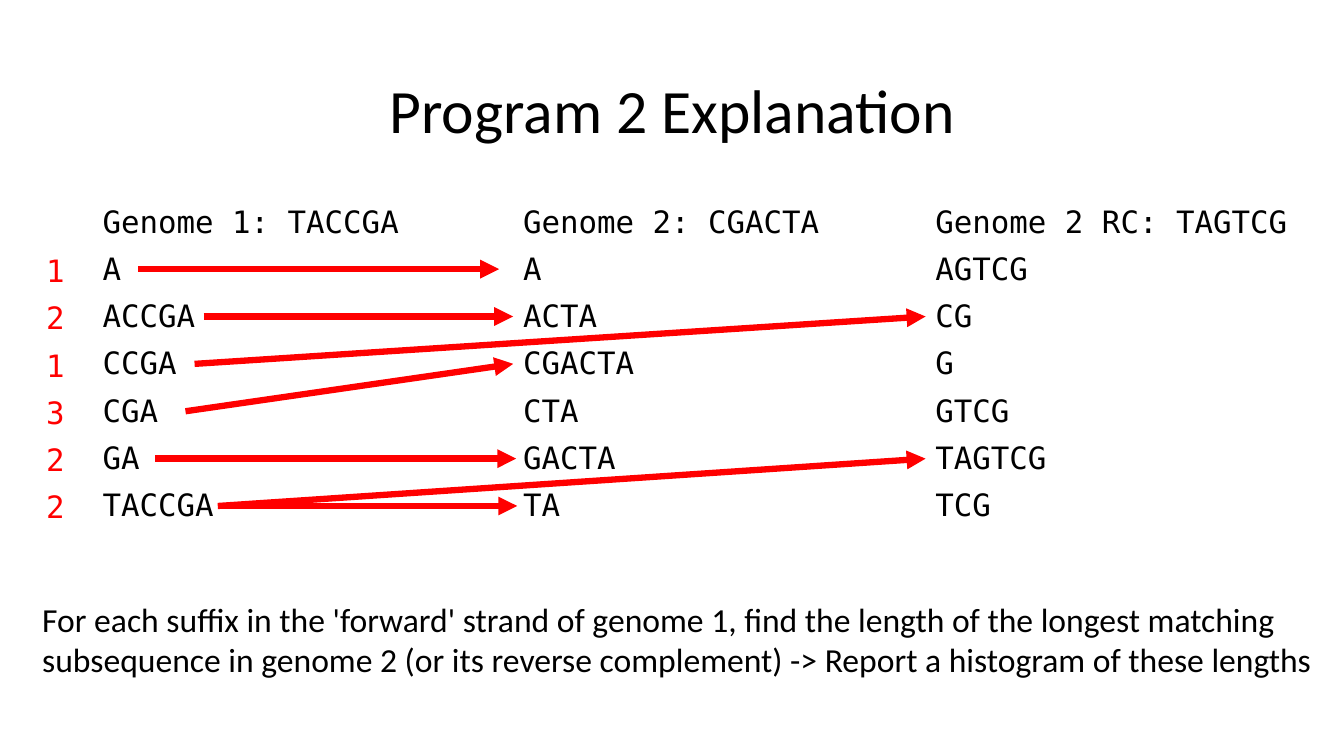
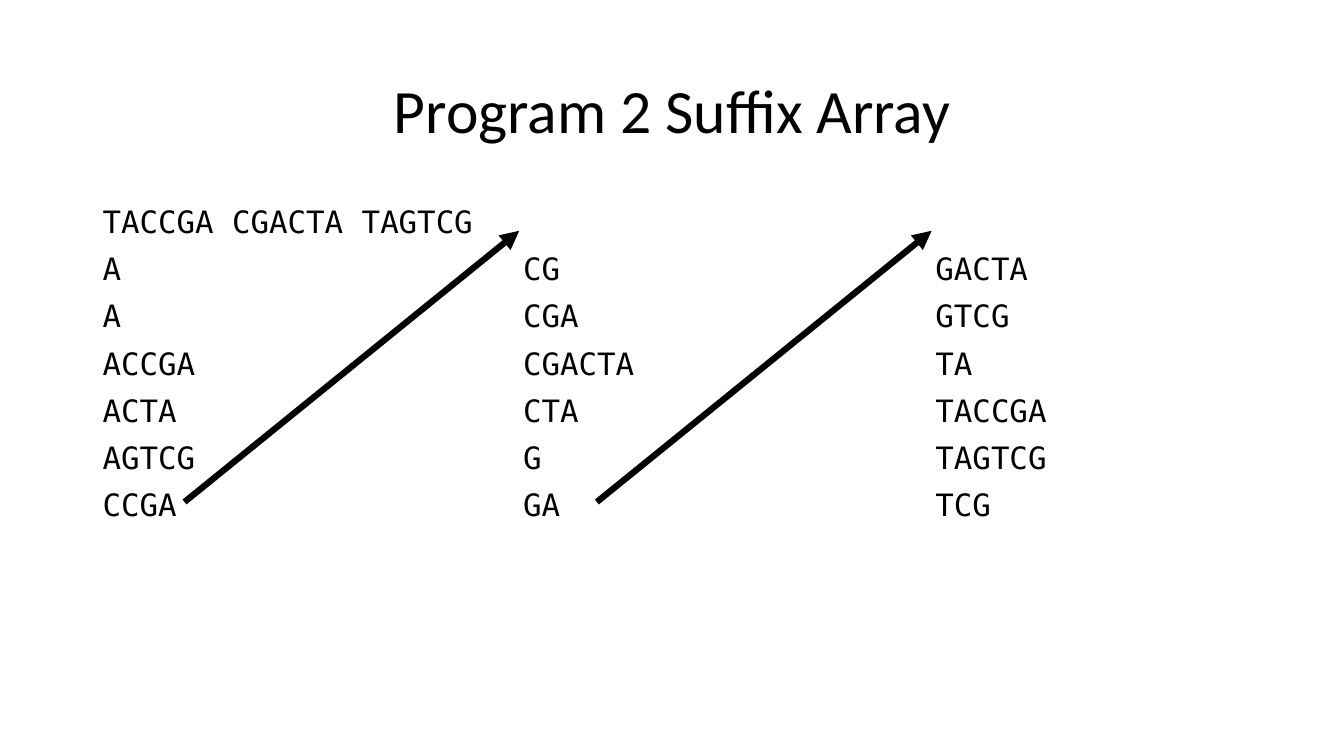
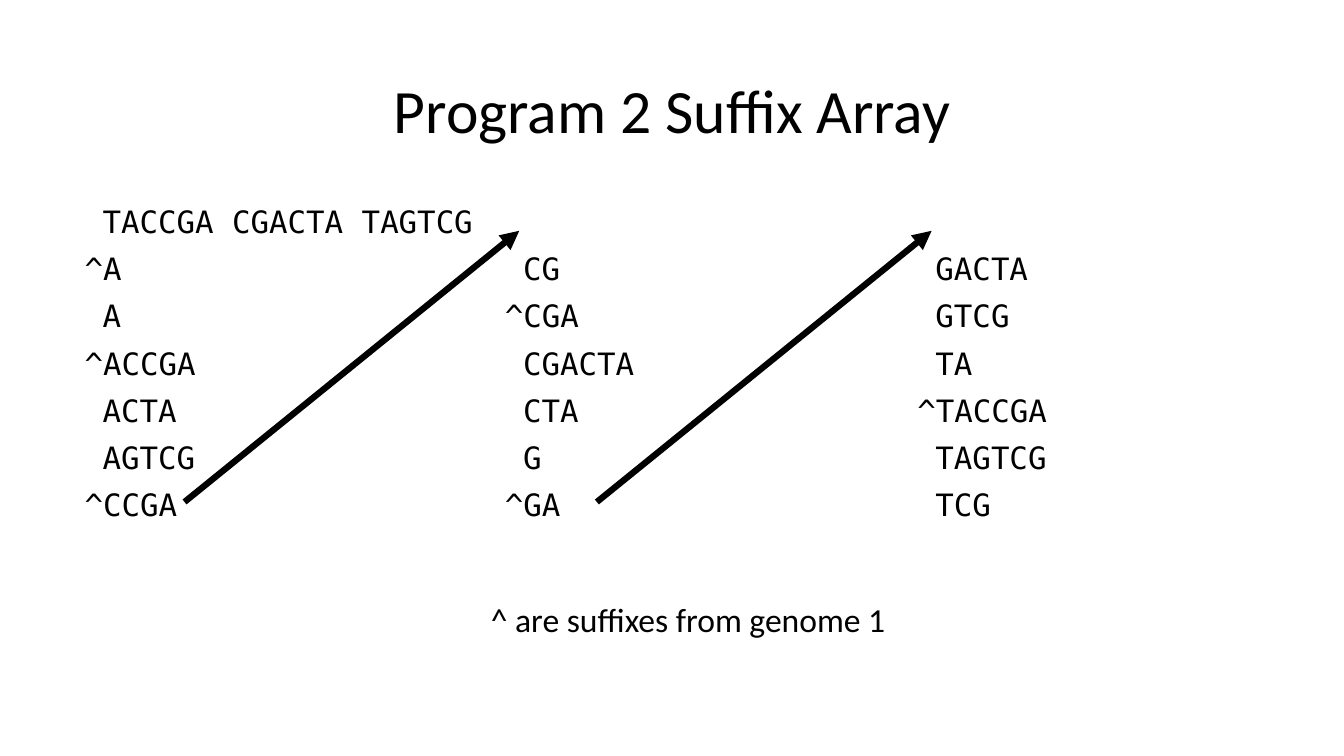
from pptx import Presentation
from pptx.dml.color import RGBColor
from pptx.enum import shapes, text
from pptx.oxml.ns import qn
from pptx.util import Inches, Pt
from lxml import etree

BLACK = RGBColor(0, 0, 0)
RED = RGBColor(255, 0, 0)
SANS, MONO = "Calibri", "DejaVu Sans Mono"
COLS = (0.92, 5.09, 9.18)   # left edges of the suffix columns
TOP, STEP = 2.0, 0.47       # top of the heading row, row pitch
MARK = 0.18                 # width of one mono character


def write(slide, lines, x, y, w, h, font=MONO, size=22, color=BLACK,
          align=text.PP_ALIGN.LEFT, anchor=text.MSO_ANCHOR.TOP,
          space=0.9, gap=10, hang=0):
    """Add a text box, one paragraph a line; ^ lines hang by `hang`."""
    frame = slide.shapes.add_textbox(
        Inches(x - hang), Inches(y), Inches(w), Inches(h)).text_frame
    frame.word_wrap = True
    frame.vertical_anchor = anchor
    for i, line in enumerate(lines):
        para = frame.add_paragraph() if i else frame.paragraphs[0]
        para.alignment = align
        para.line_spacing = space
        para.space_before = Pt(gap if i else 0)
        if hang:
            props = para._p.get_or_add_pPr()
            props.set("marL", str(Inches(hang)))
            props.set("indent", str(Inches(-hang if line[0] == "^" else 0)))
        run = para.add_run()
        run.text = line
        run.font.name = font
        run.font.size = Pt(size)
        run.font.color.rgb = color


def arrow(slide, x1, y1, x2, y2, color):
    """Add a thick line with a triangle at its end."""
    line = slide.shapes.add_connector(
        shapes.MSO_CONNECTOR.STRAIGHT,
        Inches(x1), Inches(y1), Inches(x2), Inches(y2))
    line.line.color.rgb = color
    line.line.width = Pt(4.5)
    etree.SubElement(line.line._get_or_add_ln(), qn("a:tailEnd"), type="triangle")
    etree.SubElement(line._element.spPr, qn("a:effectLst"))


deck = Presentation()
deck.slide_width, deck.slide_height = Inches(13.33), Inches(7.5)

# Slides and titles
pages = []
for title in ("Program 2 Explanation", "Program 2 Suffix Array",
              "Program 2 Suffix Array"):
    page = deck.slides.add_slide(deck.slide_layouts[6])
    write(page, [title], 0.92, 0.4, 11.5, 1.45, font=SANS, size=44,
          align=text.PP_ALIGN.CENTER, anchor=text.MSO_ANCHOR.MIDDLE)
    pages.append(page)
match, array, marked = pages

# Slide 1: suffixes of each genome
genomes = (
    ("Genome 1: TACCGA", "A", "ACCGA", "CCGA", "CGA", "GA", "TACCGA"),
    ("Genome 2: CGACTA", "A", "ACTA", "CGACTA", "CTA", "GACTA", "TA"),
    ("Genome 2 RC: TAGTCG", "AGTCG", "CG", "G", "GTCG", "TAGTCG", "TCG"),
)
for x, lines in zip(COLS, genomes):
    write(match, lines, x, TOP, 3.83, 4.76)

# Match lengths and arrows: start x, start row, end x, end row
write(match, "121322", 0.36, TOP + STEP + 0.02, 0.5, 3, color=RED)
for x1, row1, x2, row2 in (
        (1.37, 1, 4.95, 1), (2.02, 2, 5.09, 2), (1.84, 4, 5.09, 3),
        (1.54, 5, 5.12, 5), (1.93, 3, 9.18, 2), (2.16, 6, 5.13, 6),
        (2.16, 6, 9.18, 5)):
    arrow(match, x1, 2.2 + STEP * row1, x2, 2.2 + STEP * row2, RED)

write(match, ["For each suffix in the 'forward' strand of genome 1, find the "
              "length of the longest matching subsequence in genome 2 (or its "
              "reverse complement) -> Report a histogram of these lengths"],
      0.32, 5.89, 13.01, 0.91, font=SANS, size=24, space=1.0)

# Slides 2 and 3: sorted suffix array, ^ marks genome 1
suffixes = (
    ("^A", "A", "^ACCGA", "ACTA", "AGTCG", "^CCGA"),
    ("CG", "^CGA", "CGACTA", "CTA", "G", "^GA"),
    ("GACTA", "GTCG", "TA", "^TACCGA", "TAGTCG", "TCG"),
)
for page, hang in ((array, 0), (marked, MARK)):
    write(page, ["TACCGA CGACTA TAGTCG"], COLS[0], TOP, 4.07, 0.5)
    for x, lines in zip(COLS, suffixes):
        if not hang:
            lines = [line.lstrip("^") for line in lines]
        write(page, lines, x, TOP + STEP, 3.48, 3, hang=hang)
    for x in (1.83, 5.92):
        arrow(page, x, 4.98, x + 3.32, 2.29, BLACK)

write(marked, ["^ are suffixes from genome 1"], 0.32, 5.89, 13.01, 0.5,
      font=SANS, size=24, align=text.PP_ALIGN.CENTER, space=1.0)

deck.save("out.pptx")
